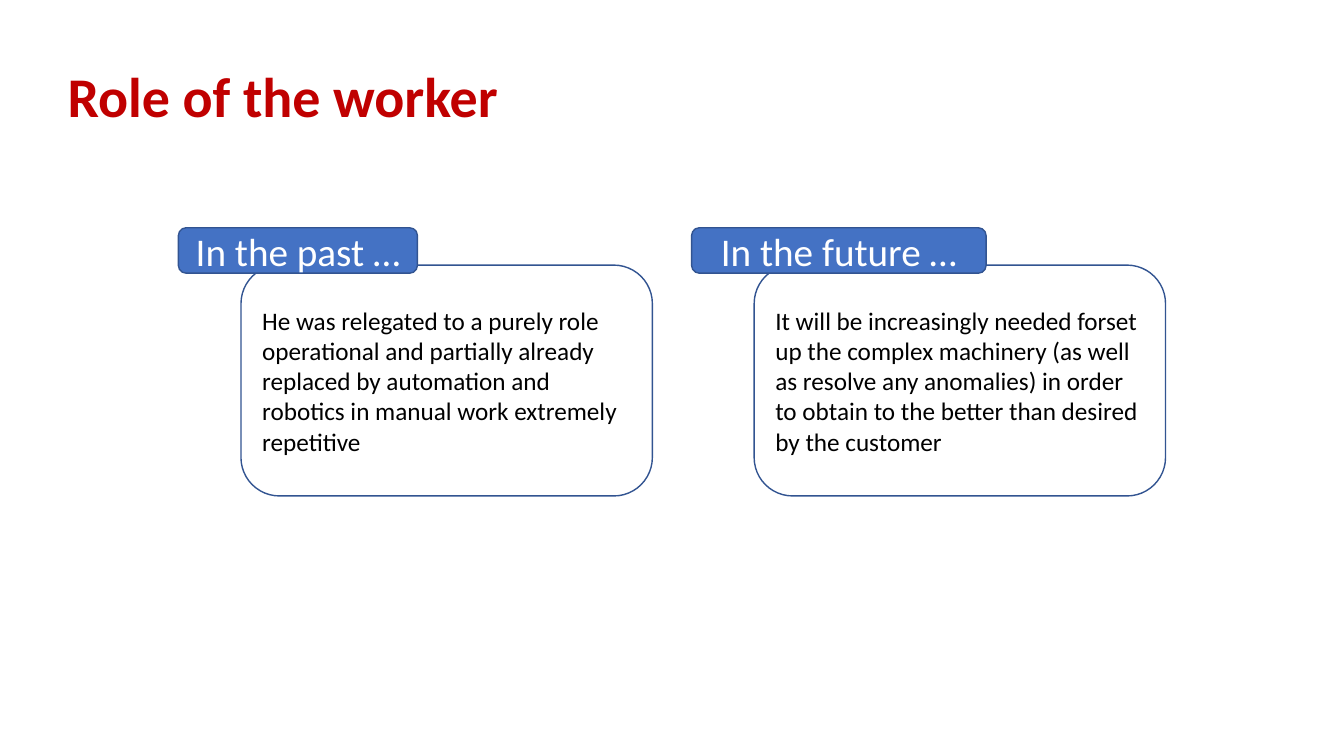
from pptx import Presentation
from pptx.dml.color import RGBColor
from pptx.enum.shapes import MSO_SHAPE
from pptx.enum.text import MSO_ANCHOR, MSO_AUTO_SIZE, PP_ALIGN
from pptx.util import Inches, Pt

ROUND = MSO_SHAPE.ROUNDED_RECTANGLE
TOP, MIDDLE = MSO_ANCHOR.TOP, MSO_ANCHOR.MIDDLE
LEFT, CENTER = PP_ALIGN.LEFT, PP_ALIGN.CENTER
FIXED = MSO_AUTO_SIZE.NONE

ROLES = [
    ("In the past …", 2.37,
     "He was relegated to a purely role operational and partially already "
     "replaced by automation and robotics in manual work extremely repetitive"),
    ("In the future …", 2.92,
     "It will be increasingly needed forset up the complex machinery (as well "
     "as resolve any anomalies) in order to obtain to the better than desired "
     "by the customer"),
]


def color(code):
    """Turn a hex string into a colour."""
    return RGBColor.from_string(code)


class Deck:
    """Holds the style and the current slide."""

    face = "Calibri"
    red, blue, edge = "C00000", "4472C4", "325491"
    black, white = "000000", "FFFFFF"

    def __init__(self, slide):
        """Keep the slide to draw on."""
        self.slide = slide

    def label(self, shape, text, size, ink, align, anchor, bold=False):
        """Put styled text into a shape."""
        frame = shape.text_frame
        frame.text = text
        frame.word_wrap = True
        frame.auto_size = FIXED
        frame.vertical_anchor = anchor
        para = frame.paragraphs[0]
        para.alignment = align
        font = para.font
        font.name, font.size, font.bold = self.face, Pt(size), bold
        font.color.rgb = color(ink)

    def title(self, text, left, top, width, height):
        """Place and fill the slide title."""
        shape = self.slide.shapes.title
        shape.left, shape.top = Inches(left), Inches(top)
        shape.width, shape.height = Inches(width), Inches(height)
        self.label(shape, text, 40, self.red, LEFT, TOP, True)

    def box(self, left, top, width, height, fill=None):
        """Draw a rounded box, filled or open."""
        shape = self.slide.shapes.add_shape(
            ROUND, Inches(left), Inches(top), Inches(width), Inches(height))
        shape.shadow.inherit = False
        if fill:
            shape.fill.solid()
            shape.fill.fore_color.rgb = color(fill)
        else:
            shape.fill.background()
        shape.line.color.rgb = color(self.edge)
        shape.line.width = Pt(1)
        return shape

    def card(self, left, top, head, width, body):
        """Draw a text card with its tab over the corner."""
        card = self.box(left + 0.62, top + 0.37, 4.08, 2.29)
        self.label(card, body, 18, self.black, LEFT, MIDDLE)
        tab = self.box(left, top, width, 0.45, self.blue)
        self.label(tab, head, 28, self.white, CENTER, MIDDLE)


def main():
    """Build and save the slide."""
    show = Presentation()
    show.slide_width, show.slide_height = Inches(13.33), Inches(7.5)
    deck = Deck(show.slides.add_slide(show.slide_layouts[5]))
    deck.title("Role of the worker", 0.57, 0.56, 6.67, 0.77)
    for index, (head, width, body) in enumerate(ROLES):
        deck.card(1.77 + 5.09 * index, 2.26, head, width, body)
    show.save("out.pptx")


if __name__ == "__main__":
    main()
